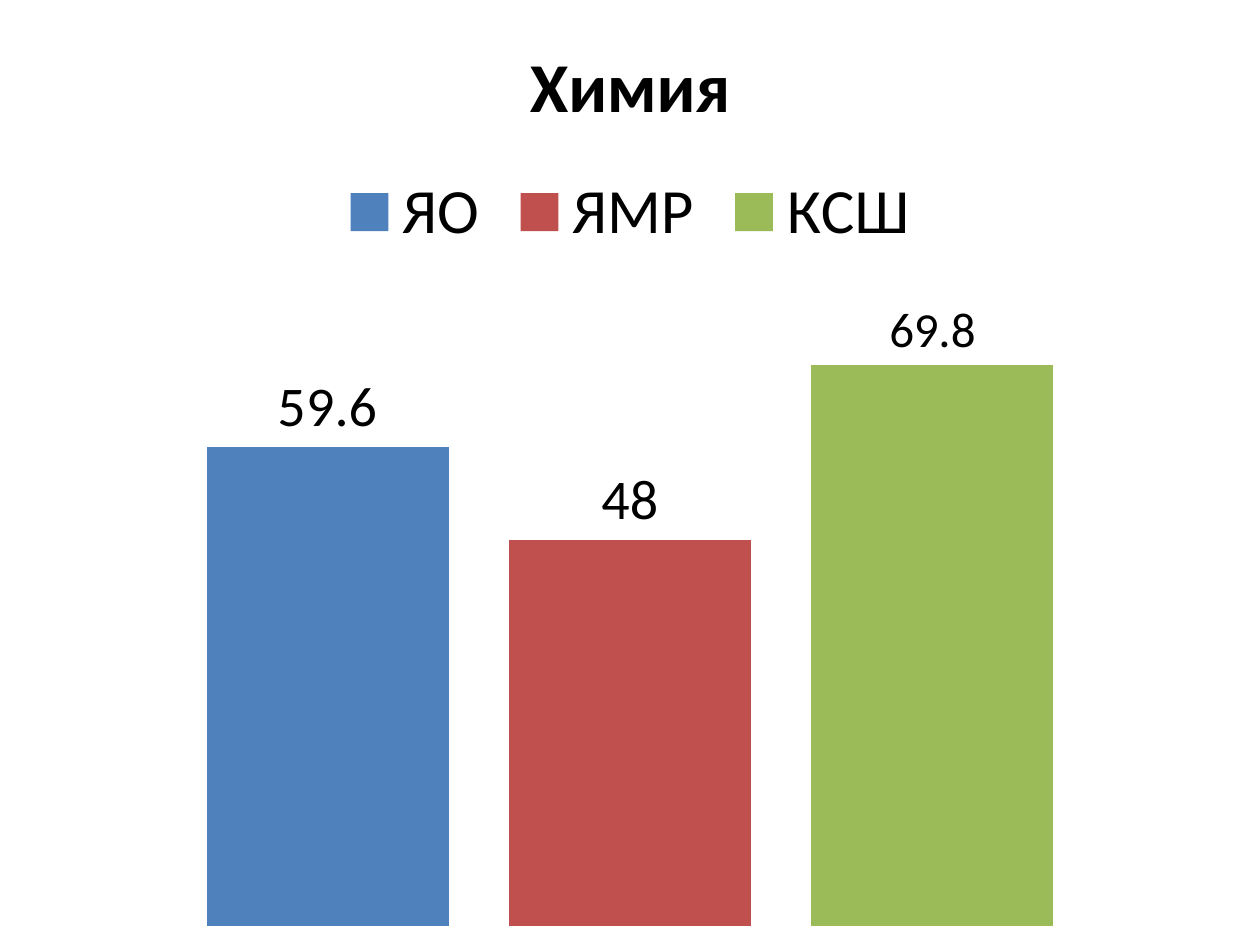
from dataclasses import dataclass

from lxml.etree import SubElement
from pptx import Presentation
from pptx.chart.data import CategoryChartData
from pptx.dml.color import RGBColor
from pptx.enum.chart import XL_CHART_TYPE, XL_LABEL_POSITION, XL_LEGEND_POSITION
from pptx.oxml.ns import qn
from pptx.util import Inches, Pt


@dataclass(frozen=True)
class Theme:
    font: str = "Calibri"
    text: str = "000000"
    base_size: int = 10
    title_size: int = 40
    legend_size: int = 36


class SlideBuilder:
    """Draws styled elements on the current slide."""

    def __init__(self, slide, theme):
        self.slide = slide
        self.theme = theme

    def style_font(self, font, size, bold=False):
        font.name = self.theme.font
        font.size = Pt(size)
        font.bold = bold
        font.color.rgb = RGBColor.from_string(self.theme.text)

    def place_plot(self, chart, **fractions):
        area = chart.plots[0]._element.getparent()
        for old in area.findall(qn("c:layout")):
            area.remove(old)
        layout = SubElement(area, qn("c:layout"))
        area.insert(0, layout)
        manual = SubElement(layout, qn("c:manualLayout"))
        settings = {"layoutTarget": "inner", "xMode": "edge", "yMode": "edge", **fractions}
        for tag, value in settings.items():
            SubElement(manual, qn(f"c:{tag}")).set("val", str(value))

    def column_chart(self, title, category, rows, left, top, width, height):
        data = CategoryChartData()
        data.categories = [category]
        for name, value, _, _ in rows:
            data.add_series(name, [value])
        chart = self.slide.shapes.add_chart(
            XL_CHART_TYPE.COLUMN_CLUSTERED,
            Inches(left), Inches(top), Inches(width), Inches(height), data,
        ).chart
        self.style_font(chart.font, self.theme.base_size)

        chart.has_title = True
        p = chart.chart_title.text_frame.paragraphs[0]
        p.text = title
        self.style_font(p.font, self.theme.title_size, bold=True)
        chart.chart_title.include_in_layout = False

        chart.has_legend = True
        chart.legend.position = XL_LEGEND_POSITION.TOP
        chart.legend.include_in_layout = False
        self.style_font(chart.legend.font, self.theme.legend_size)

        for axis in (chart.category_axis, chart.value_axis):
            axis.has_major_gridlines = False
            axis.visible = False
        chart.value_axis.minimum_scale = 0
        chart.value_axis.maximum_scale = 80

        plot = chart.plots[0]
        plot.gap_width = 150
        plot.overlap = -25
        plot.vary_by_categories = False
        for series, (_, _, color, size) in zip(plot.series, rows):
            series.format.fill.solid()
            series.format.fill.fore_color.rgb = RGBColor.from_string(color)
            labels = series.data_labels
            labels.show_value = True
            labels.position = XL_LABEL_POSITION.OUTSIDE_END
            self.style_font(labels.font, size)
        self.place_plot(chart, x=0.02, y=0.3, w=0.96, h=0.68)


def main():
    prs = Presentation()
    prs.slide_width = Inches(10)
    prs.slide_height = Inches(7.5)
    s = prs.slides.add_slide(prs.slide_layouts[6])
    scores = [
        ("ЯО", 59.6, "4F81BD", 32),
        ("ЯМР", 48, "C0504D", 32),
        ("КСШ", 69.8, "9BBB59", 28),
    ]
    SlideBuilder(s, Theme()).column_chart("Химия", "1", scores, 0, 0, 10, 7.5)
    prs.save("out.pptx")


if __name__ == "__main__":
    main()
